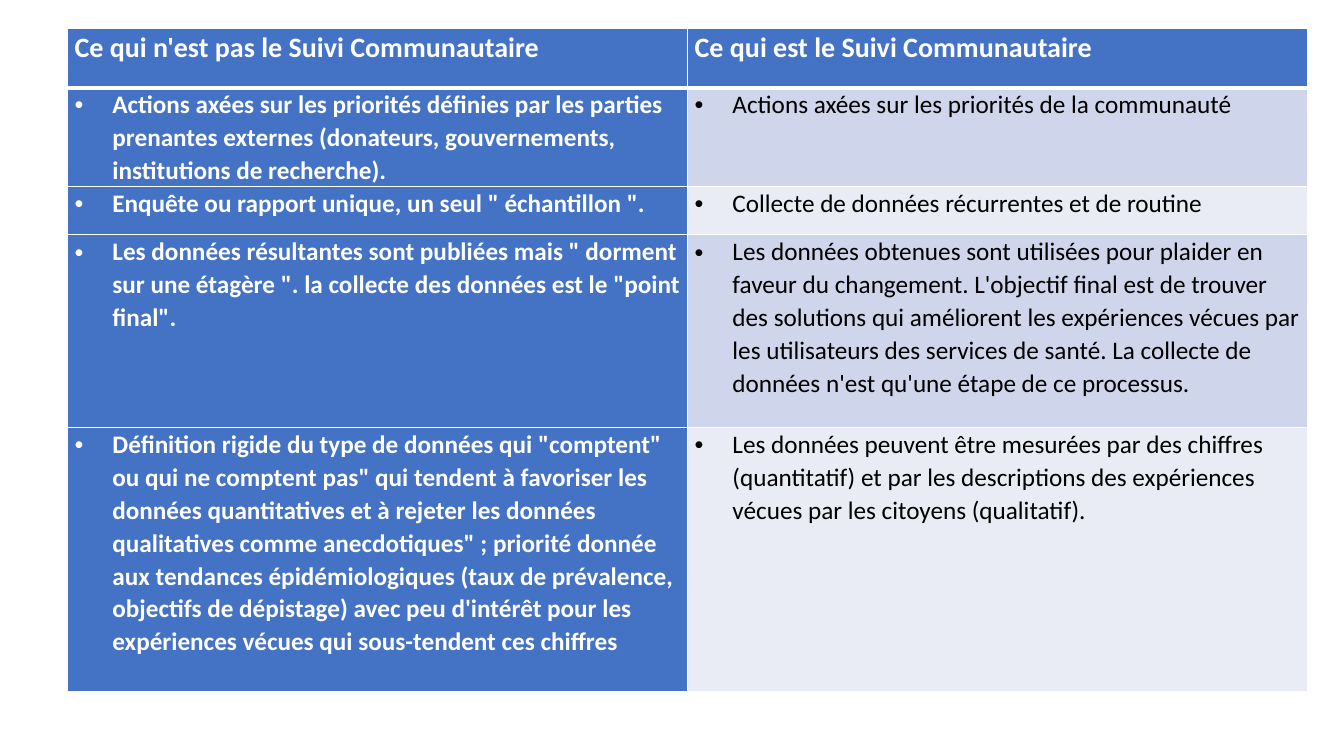
from dataclasses import dataclass

from lxml.etree import SubElement
from pptx import Presentation
from pptx.dml.color import RGBColor
from pptx.oxml.ns import qn
from pptx.util import Inches, Pt


@dataclass(frozen=True)
class Theme:
    font: str = "Calibri"
    heading_size: int = 20
    body_size: int = 18
    blue: str = "4472C4"
    bands: tuple = ("CFD5EA", "E9EBF5")
    white: str = "FFFFFF"
    black: str = "000000"
    thin: int = 1
    thick: int = 3


def add_border(cell, side, color, width):
    line = SubElement(cell._tc.get_or_add_tcPr(), qn(f"a:{side}"), w=str(Pt(width)))
    SubElement(SubElement(line, qn("a:solidFill")), qn("a:srgbClr"), val=color)


def add_bullet(paragraph):
    properties = paragraph._p.get_or_add_pPr()
    properties.set("marL", str(Inches(0.375)))
    properties.set("indent", str(Inches(-0.375)))
    SubElement(properties, qn("a:buFont"), typeface="Arial")
    SubElement(properties, qn("a:buChar"), char="•")


theme = Theme()
comparison = [
    ("Ce qui n'est pas le Suivi Communautaire", "Ce qui est le Suivi Communautaire"),
    (
        "Actions axées sur les priorités définies par les parties prenantes externes "
        "(donateurs, gouvernements, institutions de recherche).",
        "Actions axées sur les priorités de la communauté",
    ),
    (
        'Enquête ou rapport unique, un seul " échantillon ".',
        "Collecte de données récurrentes et de routine",
    ),
    (
        'Les données résultantes sont publiées mais " dorment sur une étagère ". '
        'la collecte des données est le "point final".',
        "Les données obtenues sont utilisées pour plaider en faveur du changement. "
        "L'objectif final est de trouver des solutions qui améliorent les expériences "
        "vécues par les utilisateurs des services de santé. La collecte de données "
        "n'est qu'une étape de ce processus.",
    ),
    (
        'Définition rigide du type de données qui "comptent" ou qui ne comptent pas" '
        "qui tendent à favoriser les données quantitatives et à rejeter les données "
        'qualitatives comme anecdotiques" ; priorité donnée aux tendances '
        "épidémiologiques (taux de prévalence, objectifs de dépistage) avec peu "
        "d'intérêt pour les expériences vécues qui sous-tendent ces chiffres",
        "Les données peuvent être mesurées par des chiffres (quantitatif) et par les "
        "descriptions des expériences vécues par les citoyens (qualitatif).",
    ),
]
row_heights = [0.59, 0.97, 0.48, 1.91, 2.62]

presentation = Presentation()
presentation.slide_width = Inches(13.33)
presentation.slide_height = Inches(7.5)
slide = presentation.slides.add_slide(presentation.slide_layouts[6])

table = slide.shapes.add_table(
    len(comparison), 2, Inches(0.67), Inches(0.28), Inches(12.3), Inches(sum(row_heights))
).table
for column in table.columns:
    column.width = Inches(6.15)

for row, (statements, height) in enumerate(zip(comparison, row_heights)):
    table.rows[row].height = Inches(height)
    for column, statement in enumerate(statements):
        cell = table.cell(row, column)
        heading = row == 0
        emphasized = heading or column == 0
        cell.margin_left = cell.margin_right = Inches(0.07)
        cell.margin_top = cell.margin_bottom = 0

        for side in ("lnL", "lnR", "lnT", "lnB"):
            under_heading = (row, side) in ((0, "lnB"), (1, "lnT"))
            add_border(cell, side, theme.white, theme.thick if under_heading else theme.thin)
        cell.fill.solid()
        cell.fill.fore_color.rgb = RGBColor.from_string(
            theme.blue if emphasized else theme.bands[(row - 1) % 2]
        )

        paragraph = cell.text_frame.paragraphs[0]
        paragraph.line_spacing = 1.07
        if not heading:
            add_bullet(paragraph)
        run = paragraph.add_run()
        run.text = statement
        run.font.name = theme.font
        run.font.size = Pt(theme.heading_size if heading else theme.body_size)
        run.font.bold = emphasized
        run.font.color.rgb = RGBColor.from_string(theme.white if emphasized else theme.black)

presentation.save("out.pptx")
